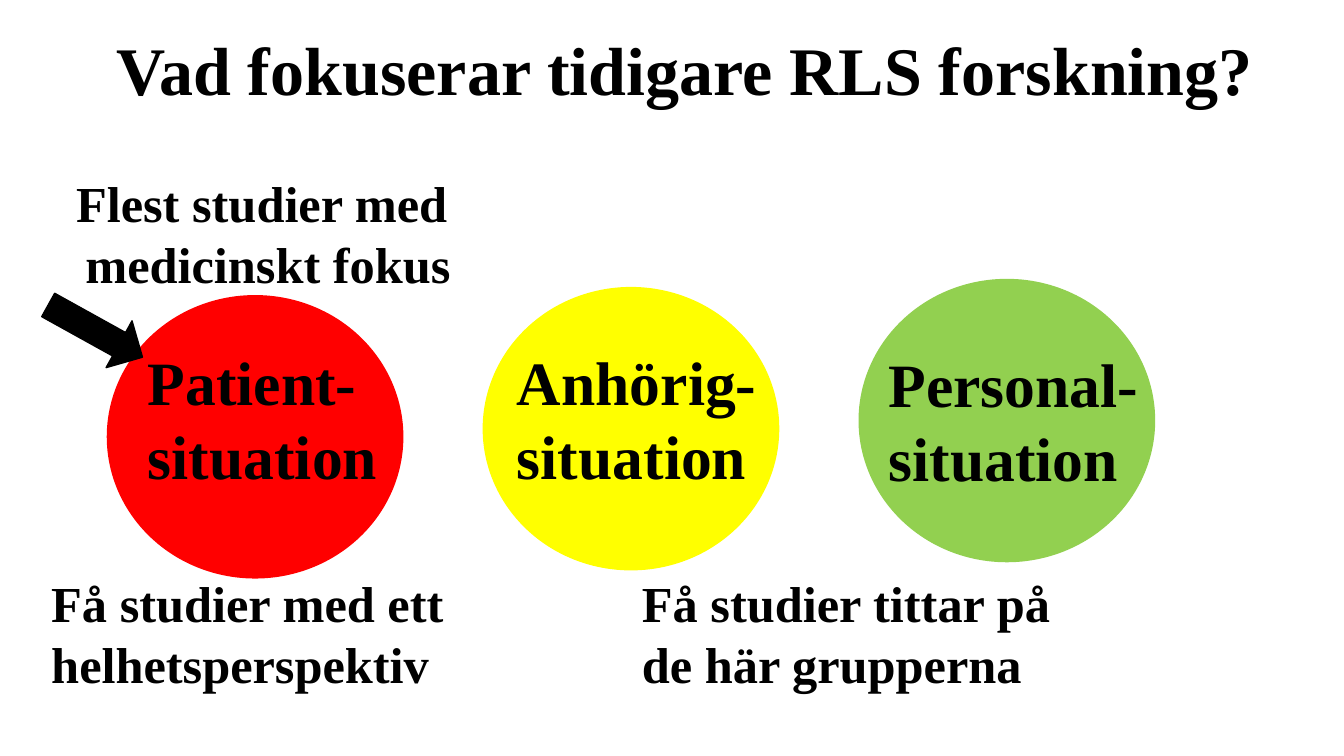
import pptx
import pptx.util
import pptx.dml.color
import pptx.enum.shapes
import pptx.enum.text

Pt = pptx.util.Pt
SHAPES = pptx.enum.shapes.MSO_SHAPE
ALIGN = pptx.enum.text.PP_ALIGN
ANCHOR = pptx.enum.text.MSO_ANCHOR
AUTO_SIZE = pptx.enum.text.MSO_AUTO_SIZE


def paint(color_format, hex_color):
    color_format.rgb = pptx.dml.color.RGBColor.from_string(hex_color)


def add_text(box, lines, size, align=ALIGN.LEFT, wrap=True):
    text_box = slide.shapes.add_textbox(*map(Pt, box))
    frame = text_box.text_frame
    frame.word_wrap = wrap
    frame.auto_size = AUTO_SIZE.SHAPE_TO_FIT_TEXT
    for index, line in enumerate(lines):
        paragraph = frame.add_paragraph() if index else frame.paragraphs[0]
        paragraph.alignment = align
        run = paragraph.add_run()
        run.text = line
        run.font.name = "Times New Roman"
        run.font.size = Pt(size)
        run.font.bold = True
        paint(run.font.color, "000000")
    return frame


presentation = pptx.Presentation()
presentation.slide_width = Pt(960)
presentation.slide_height = Pt(540)
slide = presentation.slides.add_slide(presentation.slide_layouts[6])

title = add_text((69, 0, 840, 104.4), ["Vad fokuserar tidigare RLS forskning?"], 48.6, ALIGN.CENTER)
title.auto_size = AUTO_SIZE.NONE
title.vertical_anchor = ANCHOR.MIDDLE
title.paragraphs[0].line_spacing = 0.9

circles = [
    ("FF0000", "Patient-", (98.6, 242, 180, 113.8)),
    ("FFFF00", "Anhörig-", (362.2, 242, 187.2, 113.8)),
    ("92D050", "Personal-", (627.8, 243.4, 194.4, 113.8)),
]
for index, (color, group, label_box) in enumerate(circles):
    circle = slide.shapes.add_shape(
        SHAPES.OVAL, Pt(78.5 + 268.5 * index), Pt(213 - 5.8 * index), Pt(207.4), Pt(198)
    )
    circle.shadow.inherit = False
    circle.fill.solid()
    paint(circle.fill.fore_color, color)
    paint(circle.line.color, color)
    circle.line.width = Pt(4.5)
    add_text(label_box, [group, "situation"], 44, wrap=False)

add_text((0, 119.5, 383, 94.3), ["Flest studier med ", "medicinskt fokus"], 36, ALIGN.CENTER)
add_text((451.4, 405.4, 339, 94.3), ["Få studier tittar på de här grupperna"], 36)
add_text((29.5, 405.4, 339, 94.3), ["Få studier med ett", "helhetsperspektiv"], 36)

arrow = slide.shapes.add_shape(SHAPES.DOWN_ARROW, Pt(49), Pt(198), Pt(38.2), Pt(77))
arrow.rotation = 299
arrow.shadow.inherit = False
arrow.fill.solid()
paint(arrow.fill.fore_color, "000000")
paint(arrow.line.color, "000000")
arrow.line.width = Pt(1)

presentation.save("out.pptx")
